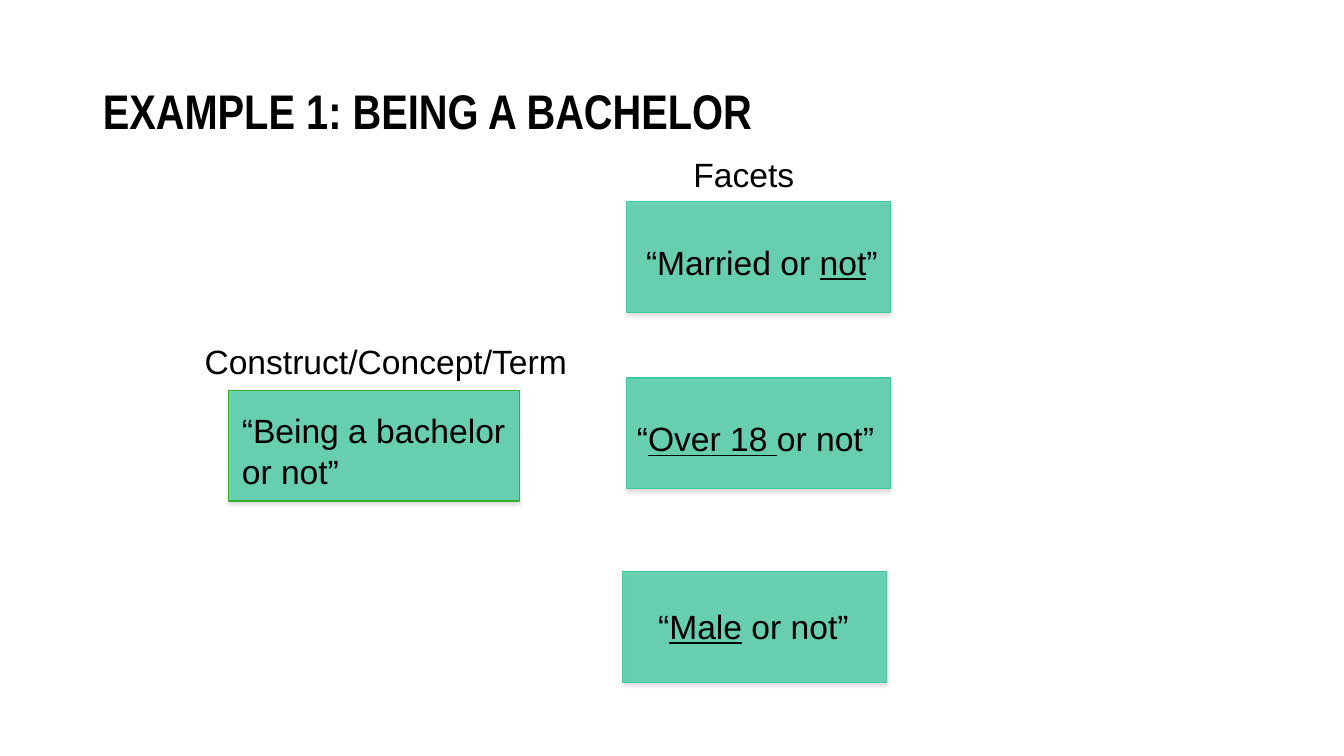
import pptx
import pptx.util
import pptx.oxml
import pptx.oxml.ns
import pptx.dml.color
import pptx.enum.shapes
import pptx.enum.text
from lxml import etree

COLORS = {"ink": "000000", "mint": "3ECA9F", "green": "30B12F", "shade": "808080"}
WIDE, HIGH = 13.333, 7.5
CARD = 14.67  # card height, percent of slide height
LINE = 6.67   # height of a one-line text


def color(name):
    return pptx.dml.color.RGBColor.from_string(COLORS[name])


def place(box):
    """Turn a box in percent of the slide into lengths."""
    sizes = (WIDE, HIGH, WIDE, HIGH)
    return [pptx.util.Inches(share * size / 100) for share, size in zip(box, sizes)]


def inside(box, dx, dy, wide, high=LINE):
    """Box set off from the corner of another box."""
    return box[0] + dx, box[1] + dy, wide, high


def add_run(para, text, size=24, face="Arial", bold=None, under=None):
    run = para.add_run()
    run.text = text
    font = run.font
    font.name, font.size = face, pptx.util.Pt(size)
    font.bold, font.underline = bold, under
    font.color.rgb = color("ink")


def add_title(slide, box, text):
    title = slide.shapes.title
    title.left, title.top, title.width, title.height = place(box)
    frame = title.text_frame
    frame.auto_size = pptx.enum.text.MSO_AUTO_SIZE.NONE
    frame.vertical_anchor = pptx.enum.text.MSO_ANCHOR.MIDDLE
    para = frame.paragraphs[0]
    para.alignment = pptx.enum.text.PP_ALIGN.LEFT
    para.line_spacing = 0.9
    add_run(para, text, 34.7, "Arial Narrow", bold=True)


def add_text(slide, box, lines, wrap=False):
    """Each line is a list of (text, underlined) runs."""
    frame = slide.shapes.add_textbox(*place(box)).text_frame
    frame.word_wrap = wrap
    frame.auto_size = pptx.enum.text.MSO_AUTO_SIZE.SHAPE_TO_FIT_TEXT
    for i, runs in enumerate(lines):
        para = frame.add_paragraph() if i else frame.paragraphs[0]
        for text, under in runs:
            add_run(para, text, under=under)


def add_card(slide, box, edge="mint"):
    card = slide.shapes.add_shape(pptx.enum.shapes.MSO_SHAPE.RECTANGLE, *place(box))
    card.fill.solid()
    card.fill.fore_color.rgb = color("mint")
    card.line.color.rgb = color(edge)
    card.line.width = pptx.util.Pt(0.75)
    # Fill transparency
    qn = pptx.oxml.ns.qn
    props = card.fill._xPr
    tint = props.find(qn("a:solidFill")).find(qn("a:srgbClr"))
    etree.SubElement(tint, qn("a:alpha"), val="74000")
    # Soft shadow below the card
    card.shadow.inherit = False
    drop = etree.SubElement(
        props.find(qn("a:effectLst")), qn("a:outerShdw"),
        blurRad=str(pptx.util.Pt(3.1)), dist=str(pptx.util.Pt(1.8)),
        dir="5400000", rotWithShape="0")
    shade = etree.SubElement(drop, qn("a:srgbClr"), val=COLORS["shade"])
    etree.SubElement(shade, qn("a:alpha"), val="35000")


def add_term(slide, box):
    """Concept card with its heading."""
    add_card(slide, box, "green")
    lines = [[("“Being a bachelor", None)], [("or not”", None)]]
    add_text(slide, inside(box, 0.23, 2, 21.45, 12.13), lines, wrap=True)
    add_text(slide, inside(box, -2.55, -7.2, 28.73), [[("Construct/Concept/Term", None)]])


def add_facets(slide, box):
    """Column of facet cards with its heading."""
    add_text(slide, inside(box, 4.2, -6.93, 9.08), [[("Facets", None)]])
    # Card offset, text offset and width, runs
    facets = [
        ((0, 0), (0.68, 4.67, 18.9),
         [("“Married or ", None), ("not", True), ("”", None)]),
        ((0, 23.33), (0, 4.67, 19.35),
         [("“", None), ("Over 18 ", True), ("or not”", None)]),
        ((-0.3, 48.93), (1.88, 3.87, 15.83),
         [("“", None), ("Male", True), (" or not”", None)]),
    ]
    for shift, spot, runs in facets:
        card = inside(box, *shift, box[2], CARD)
        add_card(slide, card)
        add_text(slide, inside(card, *spot), [runs])


def main():
    deck = pptx.Presentation()
    deck.slide_width = pptx.util.Inches(WIDE)
    deck.slide_height = pptx.util.Inches(HIGH)
    slide = deck.slides.add_slide(deck.slide_layouts[5])
    add_title(slide, (6.9, 5.33, 86.25, 19.33), "EXAMPLE 1: BEING A BACHELOR")
    add_term(slide, (17.03, 51.6, 21.6, CARD))
    add_facets(slide, (46.65, 26.67, 19.58, 63.6))
    deck.save("out.pptx")


if __name__ == "__main__":
    main()
